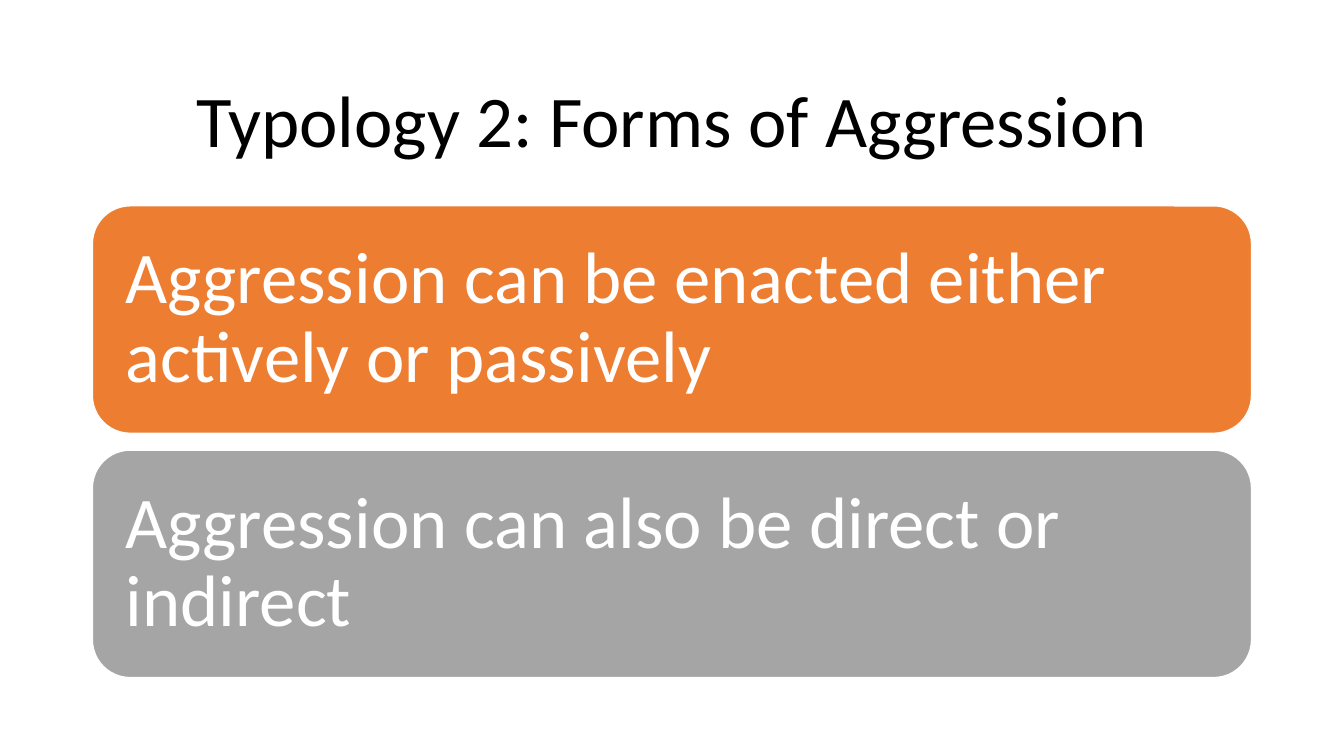
import pptx
import pptx.util
import pptx.dml.color
import pptx.enum.shapes
import pptx.enum.text

Pt = pptx.util.Pt
RGBColor = pptx.dml.color.RGBColor
Align = pptx.enum.text.PP_ALIGN

BLACK = RGBColor(0x00, 0x00, 0x00)
WHITE = RGBColor(0xFF, 0xFF, 0xFF)
ORANGE = RGBColor(0xED, 0x7D, 0x31)
GRAY = RGBColor(0xA5, 0xA5, 0xA5)

TITLE = "Typology 2: Forms of Aggression"
FORMS = [
    ("Aggression can be enacted either actively or passively", ORANGE),
    ("Aggression can also be direct or indirect", GRAY),
]

LEFT, WIDTH = 66, 828
TITLE_TOP, TITLE_HEIGHT = 44, 89.5
CARD_TOP, CARD_HEIGHT, CARD_GAP = 147, 162.5, 12
CARD_INSET = 16


def set_format(target, values):
    for name, value in values.items():
        setattr(target, name, value)


def write_text(shape, text, color, alignment, frame_format):
    frame = shape.text_frame
    frame.text = text
    set_format(frame, {
        "word_wrap": True,
        "auto_size": pptx.enum.text.MSO_AUTO_SIZE.NONE,
        "vertical_anchor": pptx.enum.text.MSO_ANCHOR.MIDDLE,
        **frame_format,
    })
    para = frame.paragraphs[0]
    set_format(para, {"alignment": alignment, "line_spacing": 0.9})
    span = para.runs[0]
    set_format(span.font, {"name": "Calibri", "size": Pt(52)})
    span.font.color.rgb = color


def add_card(page, index, text, color):
    top = CARD_TOP + index * (CARD_HEIGHT + CARD_GAP)
    card = page.shapes.add_shape(
        pptx.enum.shapes.MSO_SHAPE.ROUNDED_RECTANGLE,
        Pt(LEFT), Pt(top), Pt(WIDTH), Pt(CARD_HEIGHT))
    card.shadow.inherit = False
    card.fill.solid()
    card.fill.fore_color.rgb = color
    card.line.color.rgb = WHITE
    card.line.width = Pt(1)
    sides = ("left", "right", "top", "bottom")
    insets = {f"margin_{side}": Pt(CARD_INSET) for side in sides}
    write_text(card, text, WHITE, Align.LEFT, insets)


def main():
    deck = pptx.Presentation()
    set_format(deck, {"slide_width": Pt(960), "slide_height": Pt(540)})
    page = deck.slides.add_slide(deck.slide_layouts.get_by_name("Title Only"))
    title = page.shapes.title
    set_format(title, {
        "left": Pt(LEFT), "top": Pt(TITLE_TOP),
        "width": Pt(WIDTH), "height": Pt(TITLE_HEIGHT),
    })
    write_text(title, TITLE, BLACK, Align.CENTER, {})
    for index, (text, color) in enumerate(FORMS):
        add_card(page, index, text, color)
    deck.save("out.pptx")


if __name__ == "__main__":
    main()
